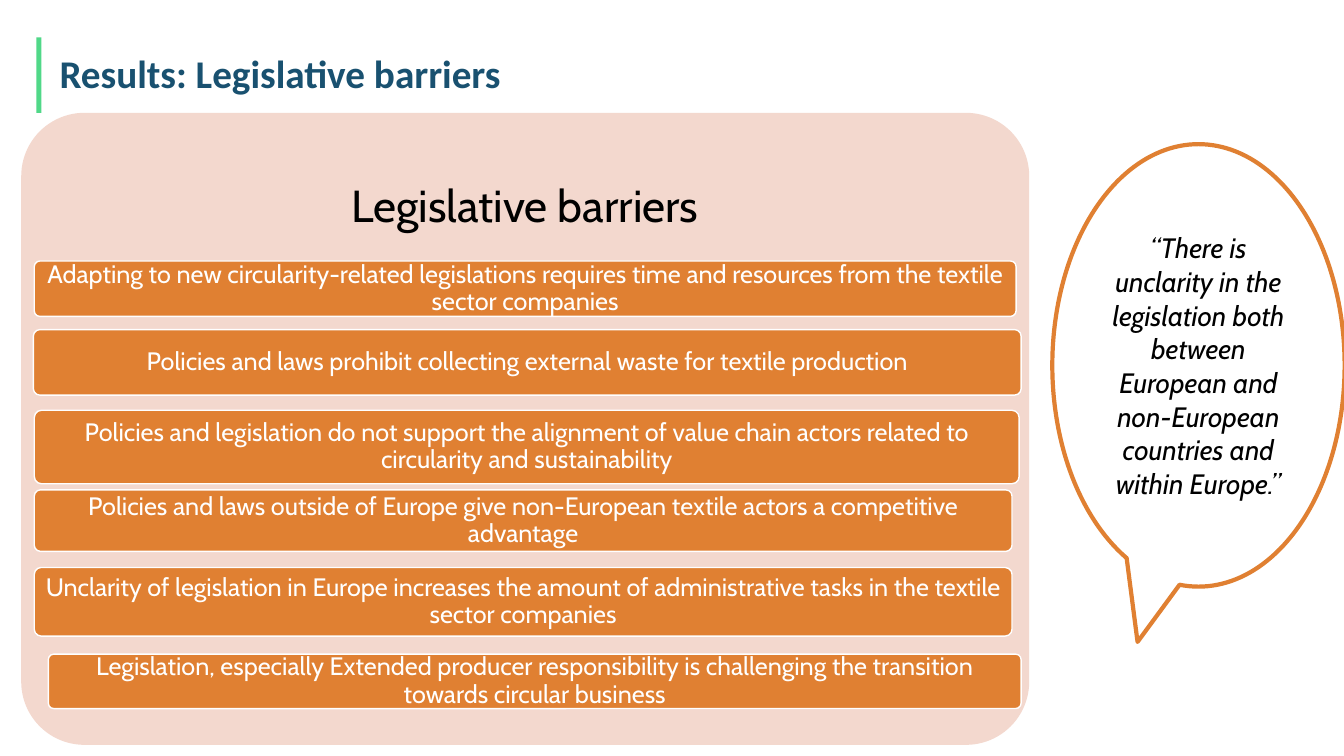
from dataclasses import dataclass

import pptx
import pptx.dml.color
import pptx.enum.shapes
import pptx.enum.text
import pptx.util

RGBColor = pptx.dml.color.RGBColor
Shapes = pptx.enum.shapes.MSO_SHAPE
Align = pptx.enum.text.PP_ALIGN

WHITE = RGBColor(0xFF, 0xFF, 0xFF)
BLACK = RGBColor(0x00, 0x00, 0x00)
GREEN = RGBColor(0x50, 0xD8, 0x88)
NAVY = RGBColor(0x19, 0x51, 0x70)
BLUSH = RGBColor(0xF3, 0xD8, 0xCE)
ORANGE = RGBColor(0xE0, 0x80, 0x32)

SLIDE_WIDTH = pptx.util.Inches(13.333)
SLIDE_HEIGHT = pptx.util.Inches(7.5)


@dataclass(frozen=True)
class Area:
    """Place on the slide, in percent of its width and height."""
    left: float
    top: float
    width: float
    height: float

    def box(self) -> tuple[int, int, int, int]:
        return (round(SLIDE_WIDTH * self.left / 100),
                round(SLIDE_HEIGHT * self.top / 100),
                round(SLIDE_WIDTH * self.width / 100),
                round(SLIDE_HEIGHT * self.height / 100))


@dataclass(frozen=True)
class TextStyle:
    size: float
    color: RGBColor
    font: str = "Cabin"
    bold: bool = False
    italic: bool = False
    align: Align = Align.CENTER
    line_spacing: float = 0.9
    inset_x: float = 0.1
    inset_y: float = 0.05


@dataclass(frozen=True)
class Barrier:
    area: Area
    text: str


TITLE_AREA = Area(3.68, 4.93, 86.25, 10.13)
ACCENT_AREA = Area(2.7, 4.93, 0.38, 10)
PANEL_AREA = Area(1.58, 14.93, 75, 83.6)
HEADING_AREA = Area(PANEL_AREA.left, PANEL_AREA.top, PANEL_AREA.width, 25.07)
QUOTE_AREA = Area(78.3, 19.07, 21.75, 58.53)

TITLE_STYLE = TextStyle(28, NAVY, font="Calibri", bold=True, align=Align.LEFT)
HEADING_STYLE = TextStyle(32, BLACK, inset_x=0.13, inset_y=0.13)
BARRIER_STYLE = TextStyle(18, WHITE, inset_x=0.05, inset_y=0.04)
QUOTE_STYLE = TextStyle(20, BLACK, italic=True, line_spacing=1.0)

BARRIERS = [
    Barrier(Area(2.55, 34.53, 73.05, 7.33),
            "Adapting to new circularity-related legislations requires time "
            "and resources from the textile sector companies"),
    Barrier(Area(2.48, 43.6, 73.5, 8.67),
            "Policies and laws prohibit collecting external waste for textile production"),
    Barrier(Area(2.55, 54.27, 73.28, 9.73),
            "Policies and legislation do not support the alignment of value "
            "chain actors related to circularity and sustainability"),
    Barrier(Area(2.55, 64.8, 72.75, 8.13),
            "Policies and laws outside of Europe give non-European textile "
            "actors a competitive advantage"),
    Barrier(Area(2.55, 75.07, 72.75, 9.07),
            "Unclarity of legislation in Europe increases the amount of "
            "administrative tasks in the textile sector companies"),
    Barrier(Area(3.6, 86.53, 72.38, 7.2),
            "Legislation, especially Extended producer responsibility is "
            "challenging the transition towards circular business"),
]
QUOTE = ("“There is unclarity in the legislation both between European and "
         "non-European countries and within Europe.”")


def write_text(shape, text: str, style: TextStyle) -> None:
    frame = shape.text_frame
    frame.text = text
    frame.word_wrap = True
    frame.auto_size = pptx.enum.text.MSO_AUTO_SIZE.NONE
    frame.vertical_anchor = pptx.enum.text.MSO_ANCHOR.MIDDLE
    frame.margin_left = frame.margin_right = pptx.util.Inches(style.inset_x)
    frame.margin_top = frame.margin_bottom = pptx.util.Inches(style.inset_y)
    paragraph = frame.paragraphs[0]
    paragraph.alignment = style.align
    paragraph.line_spacing = style.line_spacing
    font = paragraph.runs[0].font
    font.name = style.font
    font.size = pptx.util.Pt(style.size)
    font.bold = style.bold
    font.italic = style.italic
    font.color.rgb = style.color


def add_filled_shape(slide, kind: Shapes, area: Area, fill: RGBColor,
                     line: RGBColor | None = None, line_width: float = 1):
    shape = slide.shapes.add_shape(kind, *area.box())
    shape.shadow.inherit = False
    shape.fill.solid()
    shape.fill.fore_color.rgb = fill
    if line is None:
        shape.line.fill.background()
    else:
        shape.line.color.rgb = line
        shape.line.width = pptx.util.Pt(line_width)
    if kind == Shapes.ROUNDED_RECTANGLE:
        shape.adjustments[0] = 0.1
    return shape


def main() -> None:
    presentation = pptx.Presentation()
    presentation.slide_width = SLIDE_WIDTH
    presentation.slide_height = SLIDE_HEIGHT
    slide = presentation.slides.add_slide(presentation.slide_layouts[5])

    # Title with its accent bar
    add_filled_shape(slide, Shapes.RECTANGLE, ACCENT_AREA, GREEN)
    title = slide.shapes.title
    title.left, title.top, title.width, title.height = TITLE_AREA.box()
    write_text(title, "Results: Legislative barriers", TITLE_STYLE)

    # Panel with its heading
    add_filled_shape(slide, Shapes.ROUNDED_RECTANGLE, PANEL_AREA, BLUSH)
    heading = slide.shapes.add_textbox(*HEADING_AREA.box())
    write_text(heading, "Legislative barriers", HEADING_STYLE)

    # Barriers
    for barrier in BARRIERS:
        bar = add_filled_shape(slide, Shapes.ROUNDED_RECTANGLE, barrier.area, ORANGE, WHITE)
        write_text(bar, barrier.text, BARRIER_STYLE)

    # Quote
    callout = add_filled_shape(slide, Shapes.OVAL_CALLOUT, QUOTE_AREA, WHITE, ORANGE, 3)
    write_text(callout, QUOTE, QUOTE_STYLE)

    presentation.save("out.pptx")


if __name__ == "__main__":
    main()
